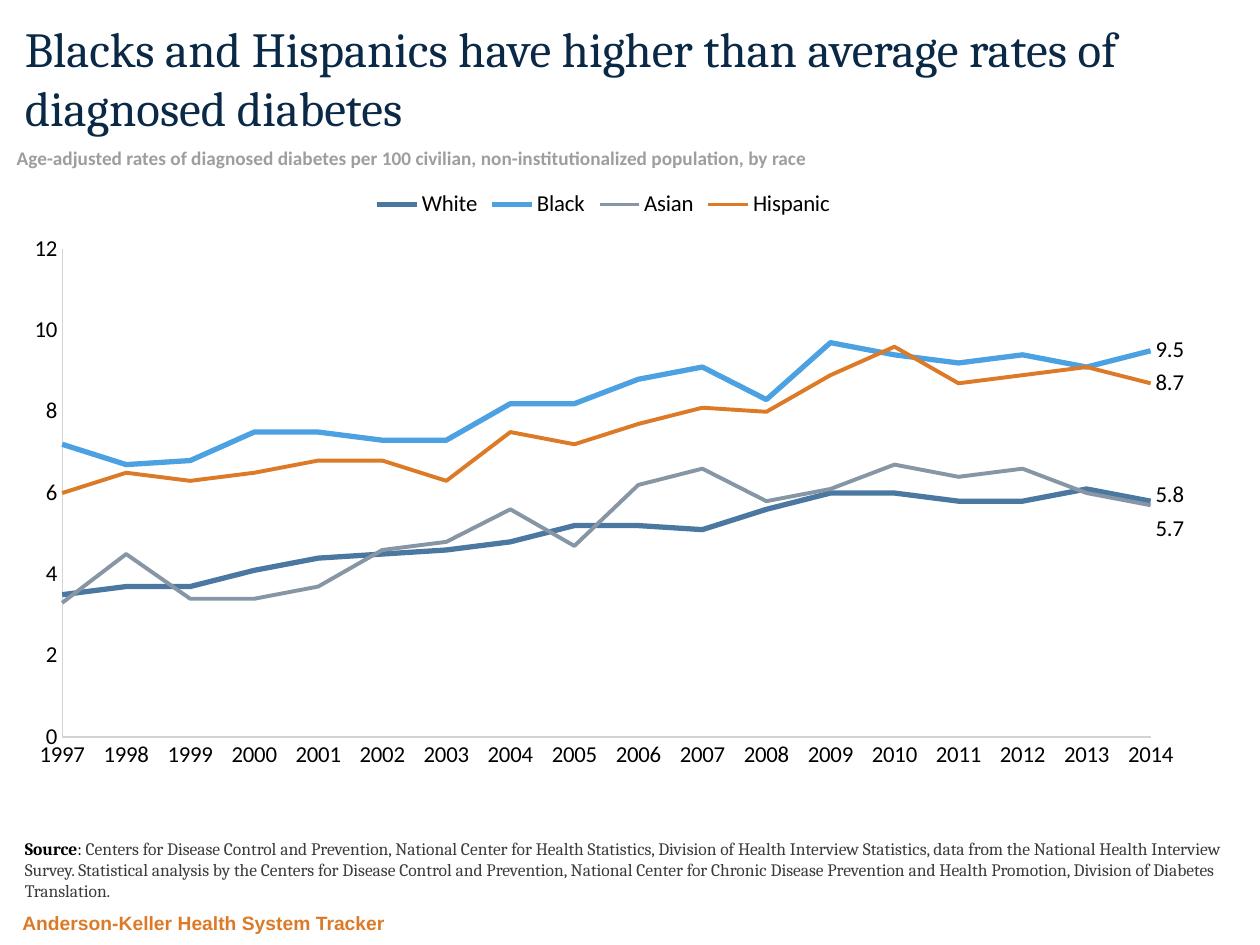
import pptx
import pptx.chart.data
import pptx.dml.color
import pptx.enum.chart
import pptx.enum.text
import pptx.oxml
import pptx.oxml.ns
import pptx.util
from pptx.util import Cm

YEARS = [str(year) for year in range(1997, 2015)]
# name, colour, line width, label shift as fractions of the chart, rates
RACES = [
    ("White", "4B78A1", 3, (0, -0.01),
     [3.5, 3.7, 3.7, 4.1, 4.4, 4.5, 4.6, 4.8, 5.2, 5.2, 5.1, 5.6, 6, 6, 5.8, 5.8, 6.1, 5.8]),
    ("Black", "4BA1E1", 3, None,
     [7.2, 6.7, 6.8, 7.5, 7.5, 7.3, 7.3, 8.2, 8.2, 8.8, 9.1, 8.3, 9.7, 9.4, 9.2, 9.4, 9.1, 9.5]),
    ("Asian", "8696A5", 2.25, (0, 0.04),
     [3.3, 4.5, 3.4, 3.4, 3.7, 4.6, 4.8, 5.6, 4.7, 6.2, 6.6, 5.8, 6.1, 6.7, 6.4, 6.6, 6, 5.7]),
    ("Hispanic", "DC7A27", 2.25, None,
     [6, 6.5, 6.3, 6.5, 6.8, 6.8, 6.3, 7.5, 7.2, 7.7, 8.1, 8, 8.9, 9.6, 8.7, 8.9, 9.1, 8.7]),
]
SOURCE = (
    "Centers for Disease Control and Prevention, National Center for Health Statistics, "
    "Division of Health Interview Statistics, data from the National Health Interview Survey. "
    "Statistical analysis by the Centers for Disease Control and Prevention, National Center for "
    "Chronic Disease Prevention and Health Promotion, Division of Diabetes Translation."
)


def rgb(value):
    return pptx.dml.color.RGBColor.from_string(value)


def add_run(p, text, size=10, font="Cambria", color="000000", bold=False):
    r = p.add_run()
    r.text = text
    r.font.size = pptx.util.Pt(size)
    r.font.name = font
    r.font.bold = bold
    r.font.color.rgb = rgb(color)


def add_text_box(slide, box, anchor="TOP", align="LEFT", wrap=True):
    """Add an empty text box and return its first paragraph."""
    tf = slide.shapes.add_textbox(*box).text_frame
    tf.word_wrap = wrap
    tf.vertical_anchor = pptx.enum.text.MSO_ANCHOR[anchor]
    p = tf.paragraphs[0]
    p.alignment = pptx.enum.text.PP_ALIGN[align]
    return p


def add_heading(slide, left, top, width):
    p = add_text_box(slide, (left + Cm(0.25), top + Cm(0.25), width - Cm(0.5), Cm(2.54)))
    add_run(p, "Blacks and Hispanics have higher than average rates of diagnosed diabetes",
            size=28, color="092947")
    p = add_text_box(slide, (left, top + Cm(2.82), Cm(16.61), Cm(0.74)),
                     align="CENTER", wrap=False)
    add_run(p, "Age-adjusted rates of diagnosed diabetes per 100 civilian, "
               "non-institutionalized population, by race",
            size=11, font="Calibri", color="9E9E9E", bold=True)


def add_footer(slide, left, top, width):
    p = add_text_box(slide, (left + Cm(0.25), top, width - Cm(0.46), Cm(2.03)), anchor="BOTTOM")
    add_run(p, "Source", bold=True)
    add_run(p, ": ")
    add_run(p, SOURCE, color="3C3A3B")
    p = add_text_box(slide, (left + Cm(0.2), top + Cm(1.95), Cm(20.27), Cm(0.76)),
                     anchor="BOTTOM")
    add_run(p, "Anderson-Keller Health System Tracker",
            size=11, font="Arial", color="DC7A27", bold=True)


def manual_layout(**values):
    items = "".join(f'<c:{tag} val="{value}"/>' for tag, value in values.items())
    return pptx.oxml.parse_xml(
        f'<c:layout {pptx.oxml.ns.nsdecls("c")}><c:manualLayout>{items}</c:manualLayout></c:layout>')


def format_axes(chart):
    for axis in (chart.category_axis, chart.value_axis):
        axis.has_major_gridlines = False
        axis.major_tick_mark = pptx.enum.chart.XL_TICK_MARK.NONE
        axis.minor_tick_mark = pptx.enum.chart.XL_TICK_MARK.NONE
        axis.format.line.color.rgb = rgb("D3D3D3")
        axis.format.line.width = pptx.util.Pt(0.75)
    axis = chart.value_axis
    axis.minimum_scale, axis.maximum_scale, axis.major_unit = 0, 12, 2
    axis.tick_labels.number_format = "0"
    axis.tick_labels.number_format_is_linked = False

    # Lines start on the value axis itself
    ns = pptx.oxml.ns.qn
    val_ax = chart.value_axis._element
    for old in val_ax.findall(ns("c:crossBetween")):
        val_ax.remove(old)
    val_ax.find(ns("c:crosses")).addnext(pptx.oxml.parse_xml(
        f'<c:crossBetween {pptx.oxml.ns.nsdecls("c")} val="midCat"/>'))


def format_series(series, color, width, shift):
    """Style one line and label its last point."""
    series.smooth = False
    series.format.line.color.rgb = rgb(color)
    series.format.line.width = pptx.util.Pt(width)
    series.marker.style = pptx.enum.chart.XL_MARKER_STYLE.NONE
    series.data_labels.show_value = False
    label = series.points[len(YEARS) - 1].data_label
    label.position = pptx.enum.chart.XL_LABEL_POSITION.RIGHT
    if shift:
        idx = series.data_labels._element.find(".//" + pptx.oxml.ns.qn("c:idx"))
        idx.addnext(manual_layout(x=shift[0], y=shift[1]))


def add_rate_chart(slide, left, top, width, height):
    data = pptx.chart.data.CategoryChartData()
    data.categories = YEARS
    for name, *_, rates in RACES:
        data.add_series(name, rates)
    chart = slide.shapes.add_chart(
        pptx.enum.chart.XL_CHART_TYPE.LINE, left, top, width, height, data).chart
    chart.has_title = False
    chart.font.name = "Calibri"
    chart.font.size = pptx.util.Pt(13)
    chart.font.color.rgb = rgb("000000")
    chart.has_legend = True
    chart.legend.position = pptx.enum.chart.XL_LEGEND_POSITION.TOP
    chart.legend.include_in_layout = False
    plot = chart.plots[0]
    plot.vary_by_categories = False
    format_axes(chart)
    for series, (_, color, line_width, shift, _) in zip(plot.series, RACES):
        format_series(series, color, line_width, shift)

    plot_area = plot._element.getparent()
    for old in plot_area.findall(pptx.oxml.ns.qn("c:layout")):
        plot_area.remove(old)
    plot_area.insert(0, manual_layout(layoutTarget="inner", xMode="edge", yMode="edge",
                                      x=0.044, y=0.12, w=0.917, h=0.807))


def main():
    prs = pptx.Presentation()
    prs.slide_width, prs.slide_height = Cm(25.4), Cm(19.05)
    slide = prs.slides.add_slide(prs.slide_layouts[6])
    add_heading(slide, 0, 0, prs.slide_width)
    add_rate_chart(slide, Cm(0.2), Cm(3.56), Cm(23.93), Cm(12.19))
    add_footer(slide, 0, Cm(16.26), prs.slide_width)
    prs.save("out.pptx")


if __name__ == "__main__":
    main()
